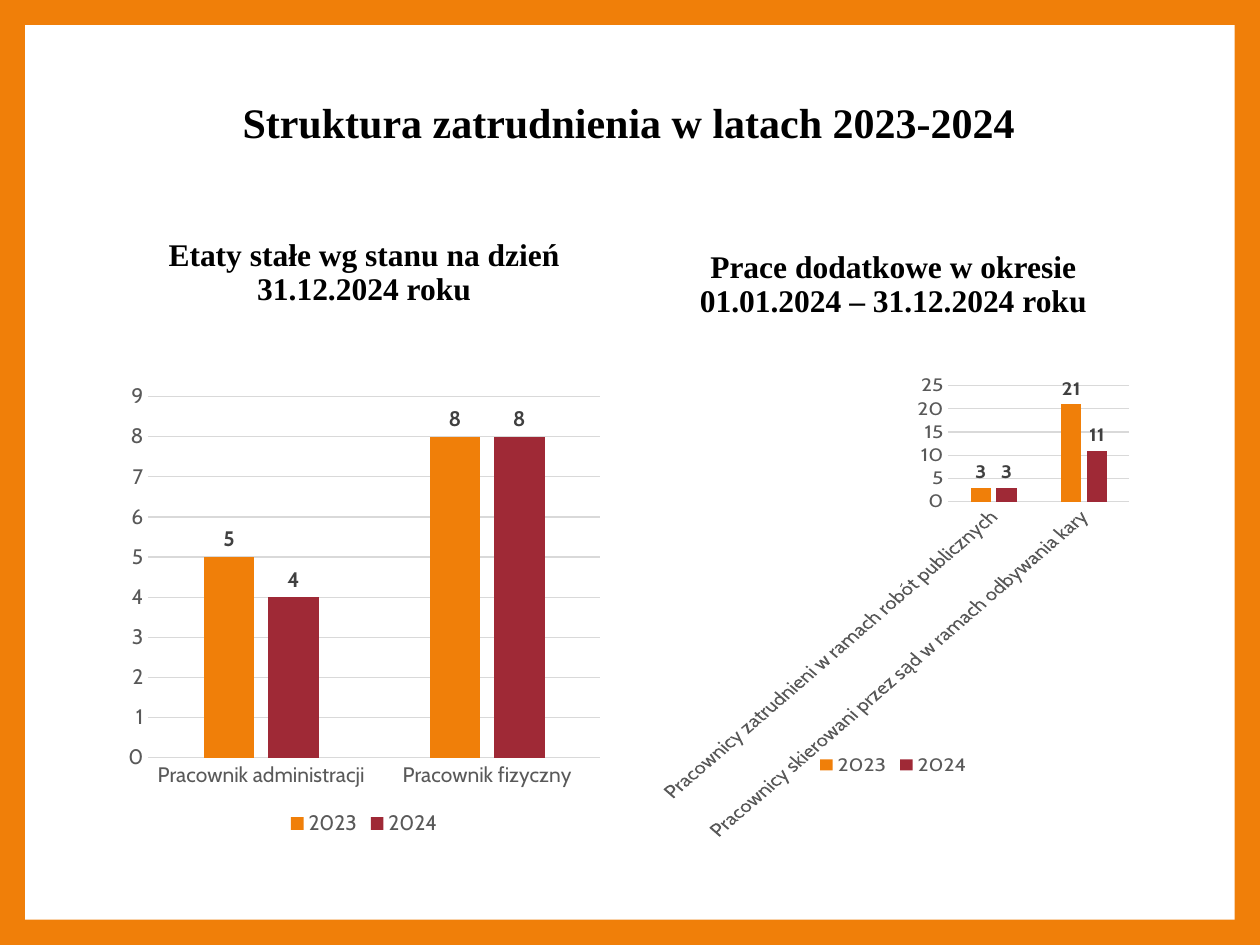
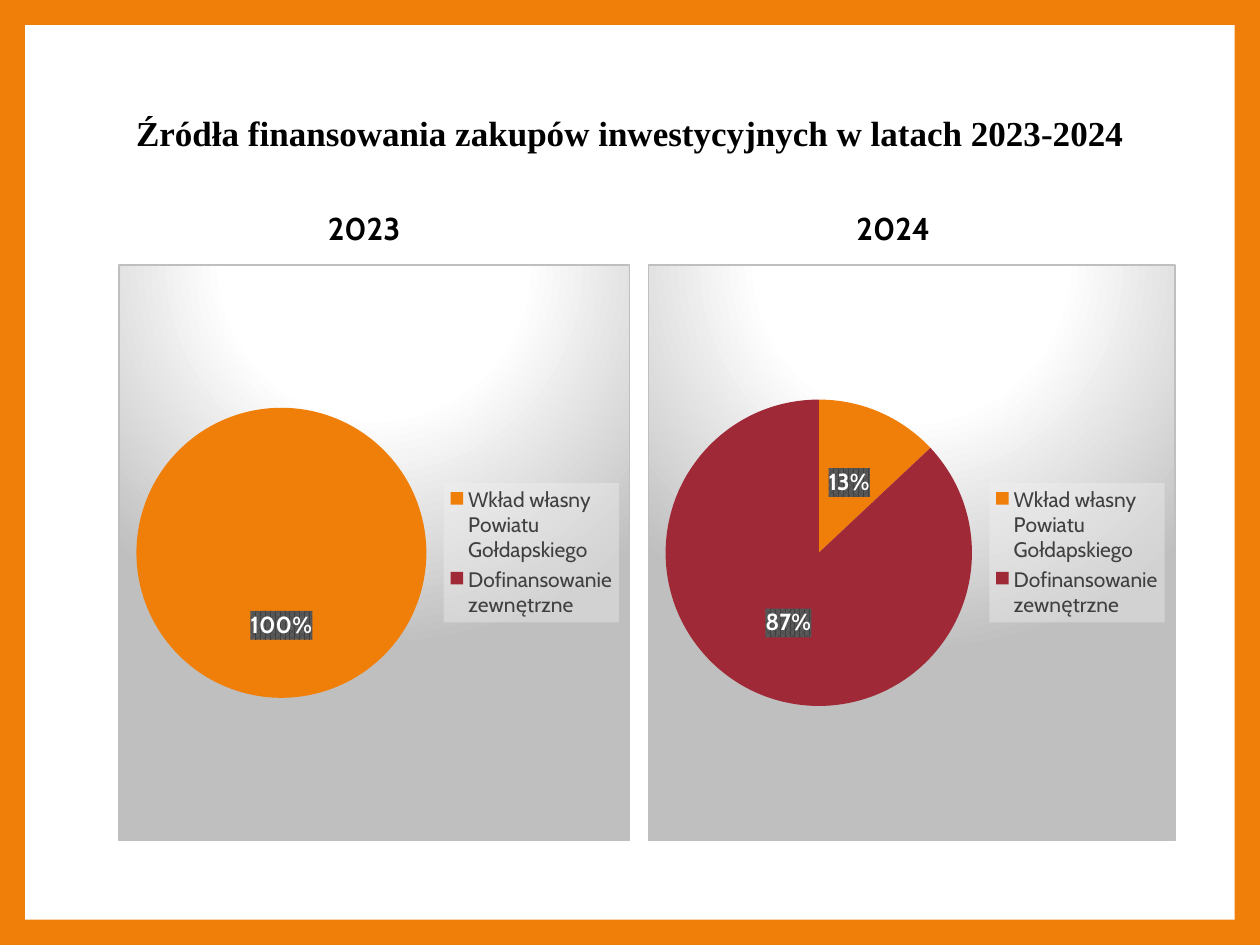
"""Builds two slides on staffing and on the funding of investment purchases."""
import dataclasses

import lxml.etree
import pptx
import pptx.chart.data
import pptx.dml.color
import pptx.enum.chart
import pptx.enum.shapes
import pptx.enum.text
import pptx.util

Pt = pptx.util.Pt
NAMESPACES = (
    'xmlns:c="http://schemas.openxmlformats.org/drawingml/2006/chart" '
    'xmlns:a="http://schemas.openxmlformats.org/drawingml/2006/main"'
)


@dataclasses.dataclass(frozen=True)
class Theme:
    """Colours, fonts, type sizes and column edges."""
    orange: str = "F07F09"
    crimson: str = "9F2936"
    white: str = "FFFFFF"
    black: str = "000000"
    label: str = "404040"
    label_stripe: str = "595959"
    axis: str = "595959"
    grid: str = "D9D9D9"
    frame: str = "BFBFBF"
    legend_tint: str = "F2F2F2"
    serif: str = "Times New Roman"
    sans: str = "Cabin"
    heading_size: float = 18
    chart_size: float = 10
    label_size: float = 12
    share_size: float = 13.3
    left: float = 67.7
    right: float = 370.1
    column: float = 280.8


def colour(value):
    """Return an RGB colour from its hex form."""
    return pptx.dml.color.RGBColor.from_string(value)


def xml(tag, content):
    """Return a chart element with the given content."""
    return lxml.etree.fromstring(f"<c:{tag} {NAMESPACES}>{content}</c:{tag}>")


class Deck:
    """Holds the style and the current slide."""

    def __init__(self, theme):
        """Open an orange 4:3 presentation."""
        self.theme = theme
        self.presentation = pptx.Presentation()
        self.presentation.slide_width = Pt(720)
        self.presentation.slide_height = Pt(540)
        self.slide = None
        self.fill(self.presentation.slide_master.background, theme.orange)

    def fill(self, target, value):
        """Fill a target with one colour."""
        target.fill.solid()
        target.fill.fore_color.rgb = colour(value)

    def font(self, font, size, value, bold=False, family=None):
        """Format a font."""
        font.name = family or self.theme.sans
        font.size = Pt(size)
        font.bold = bold
        font.color.rgb = colour(value)

    def set_text(self, holder, text, size, family):
        """Set one bold centred paragraph."""
        frame = holder.text_frame
        frame.text = text
        frame.word_wrap = True
        frame.vertical_anchor = pptx.enum.text.MSO_ANCHOR.MIDDLE
        paragraph = frame.paragraphs[0]
        paragraph.alignment = pptx.enum.text.PP_ALIGN.CENTER
        paragraph.line_spacing = 0.9
        paragraph.space_before = Pt(0)
        self.font(paragraph.runs[0].font, size, self.theme.black, True, family)

    def start(self, text, box, size):
        """Add a slide with the white panel and its title."""
        self.slide = self.presentation.slides.add_slide(self.presentation.slide_layouts[5])
        panel = self.slide.shapes.add_shape(
            pptx.enum.shapes.MSO_SHAPE.RECTANGLE, *map(Pt, (14.4, 14.4, 691.2, 511.2)))
        self.fill(panel, self.theme.white)
        panel.line.fill.background()
        panel.shadow.inherit = False
        title = self.slide.shapes.title
        title._element.addprevious(panel._element)
        title.left, title.top, title.width, title.height = map(Pt, box)
        self.set_text(title, text, size, self.theme.serif)

    def heading(self, text, left, top, height, family):
        """Add a column heading."""
        box = self.slide.shapes.add_textbox(*map(Pt, (left, top, self.theme.column, height)))
        self.set_text(box, text, self.theme.heading_size, family)

    def chart(self, kind, box, categories, series, legend_position, legend_colour):
        """Add a chart with its font and legend."""
        data = pptx.chart.data.CategoryChartData()
        data.categories = categories
        for name, values in series.items():
            data.add_series(name, values)
        chart = self.slide.shapes.add_chart(kind, *map(Pt, box), data).chart
        chart.has_title = False
        self.font(chart.font, self.theme.chart_size, self.theme.black)
        chart.has_legend = True
        chart.legend.position = legend_position
        chart.legend.include_in_layout = False
        self.font(chart.legend.font, self.theme.label_size, legend_colour)
        return chart

    def columns(self, left, categories, series):
        """Add a clustered column chart comparing the years."""
        theme = self.theme
        chart = self.chart(
            pptx.enum.chart.XL_CHART_TYPE.COLUMN_CLUSTERED,
            (left, 214.2, theme.column, 266.4), categories, series,
            pptx.enum.chart.XL_LEGEND_POSITION.BOTTOM, theme.axis)
        plot = chart.plots[0]
        plot.gap_width, plot.overlap = 219, -27
        plot.vary_by_categories = False
        for year, value in zip(plot.series, (theme.orange, theme.crimson)):
            self.fill(year.format, value)
            labels = year.data_labels
            labels.show_value = True
            labels.position = pptx.enum.chart.XL_LABEL_POSITION.OUTSIDE_END
            self.font(labels.font, theme.label_size, theme.label, True)
        for axis in (chart.category_axis, chart.value_axis):
            axis.major_tick_mark = axis.minor_tick_mark = pptx.enum.chart.XL_TICK_MARK.NONE
            self.font(axis.tick_labels.font, theme.label_size, theme.axis)
        chart.value_axis.format.line.fill.background()
        for line in (chart.category_axis.format.line,
                     chart.value_axis.major_gridlines.format.line):
            line.color.rgb = colour(theme.grid)
            line.width = Pt(0.75)
        body = chart.category_axis._element.find(".//{*}txPr/{*}bodyPr")
        body.set("rot", "-60000000")
        body.set("vert", "horz")

    def pie(self, box, categories, shares):
        """Add a pie chart on a grey radial backdrop."""
        theme = self.theme
        chart = self.chart(
            pptx.enum.chart.XL_CHART_TYPE.PIE, box, categories, {"Series 1": shares},
            pptx.enum.chart.XL_LEGEND_POSITION.RIGHT, theme.label)
        chart.plots[0].vary_by_categories = True
        sources = chart.plots[0].series[0]
        labels = sources.data_labels
        labels.show_percentage, labels.show_value = True, False
        labels.number_format, labels.number_format_is_linked = "0%", False
        labels.position = pptx.enum.chart.XL_LABEL_POSITION.CENTER
        self.font(labels.font, theme.share_size, theme.white, True)
        labels._element.find("{*}numFmt").addnext(xml("spPr", (
            f'<a:pattFill prst="pct75"><a:fgClr><a:srgbClr val="{theme.label}"/></a:fgClr>'
            f'<a:bgClr><a:srgbClr val="{theme.label_stripe}"/></a:bgClr></a:pattFill>')))
        for index, value in enumerate((theme.orange, theme.crimson)):
            self.fill(sources.points[index].format, value)
            if not shares[index]:
                labels._element.insert(0, xml(
                    "dLbl", f'<c:idx val="{index}"/><c:delete val="1"/>'))
        chart.legend._element.find("{*}overlay").addnext(xml("spPr", (
            f'<a:solidFill><a:srgbClr val="{theme.legend_tint}">'
            '<a:alpha val="39000"/></a:srgbClr></a:solidFill>')))
        stops = "".join(
            f'<a:gs pos="{position * 1000}"><a:srgbClr val="{value}"/></a:gs>'
            for position, value in ((0, theme.white), (39, theme.white), (100, theme.frame)))
        content = chart._chartSpace.find("{*}chart")
        content.addnext(xml("spPr", (
            f'<a:gradFill><a:gsLst>{stops}</a:gsLst><a:path path="circle">'
            '<a:fillToRect l="50000" t="-80000" r="50000" b="180000"/></a:path></a:gradFill>'
            f'<a:ln w="9525"><a:solidFill><a:srgbClr val="{theme.frame}"/></a:solidFill></a:ln>')))
        if chart._chartSpace.find("{*}roundedCorners") is None:
            corners = xml("roundedCorners", "")
            corners.set("val", "0")
            content.addprevious(corners)


def main():
    """Build and save both slides."""
    theme = Theme()
    deck = Deck(theme)

    deck.start("Struktura zatrudnienia w latach 2023-2024", (67.7, 48.2, 583.2, 46.1), 24)
    deck.heading("Etaty stałe wg stanu na dzień 31.12.2024 roku",
                 theme.left, 116.6, 79.2, theme.serif)
    deck.columns(theme.left, ("Pracownik administracji", "Pracownik fizyczny"),
                 {"2023": (5, 8), "2024": (4, 8)})
    deck.heading("Prace dodatkowe w okresie 01.01.2024 – 31.12.2024 roku",
                 theme.right, 129.4, 67.7, theme.serif)
    deck.columns(theme.right, ("Pracownicy zatrudnieni w ramach robót publicznych",
                               "Pracownicy skierowani przez sąd w ramach odbywania kary"),
                 {"2023": (3, 21), "2024": (3, 11)})

    deck.start("Źródła finansowania zakupów inwestycyjnych w latach 2023-2024",
               (48.2, 48.2, 623.6, 57.6), 20)
    funding = ("Wkład własny Powiatu Gołdapskiego", "Dofinansowanie zewnętrzne")
    for year, left, width, shares in (("2023", theme.left, 292.3, (100, 0)),
                                      ("2024", theme.right, 301.7, (13, 87))):
        deck.heading(year, left, 111.6, 39.6, theme.sans)
        deck.pie((left, 151, width, 329.8), funding, shares)

    deck.presentation.save("out.pptx")


if __name__ == "__main__":
    main()
